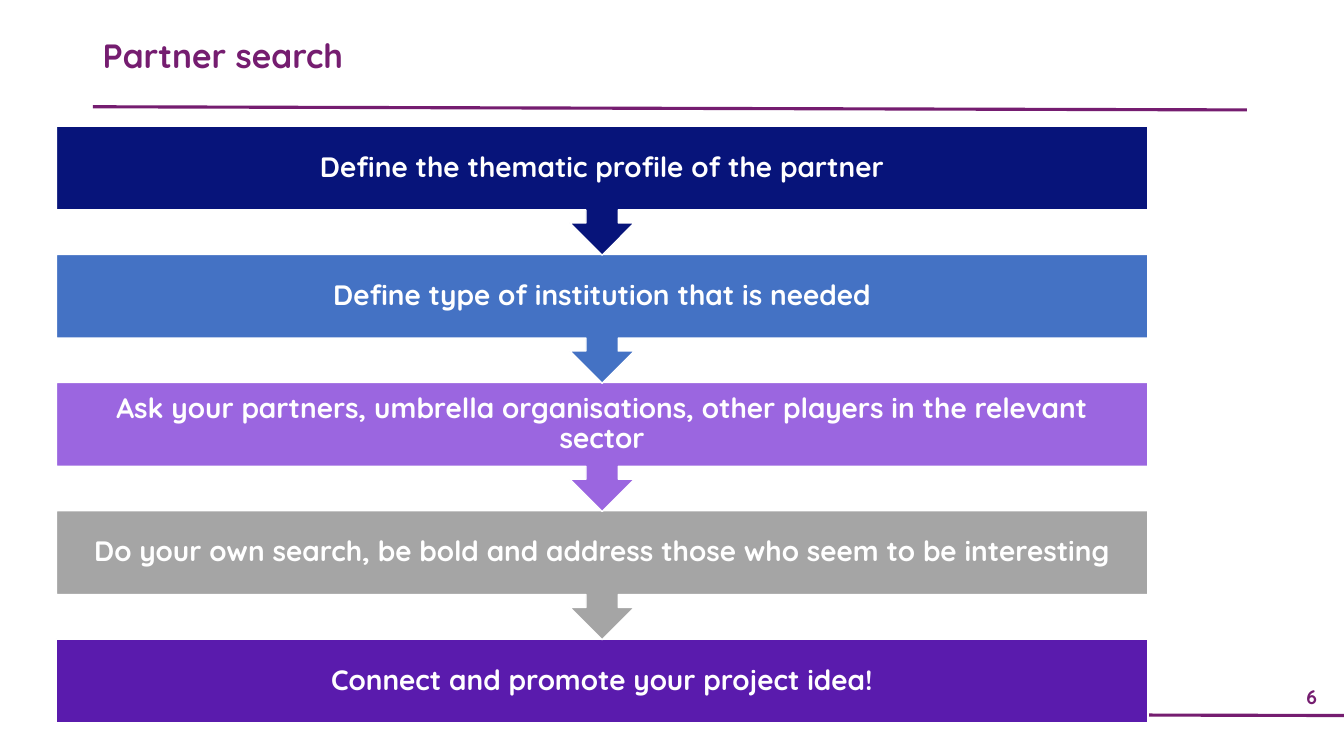
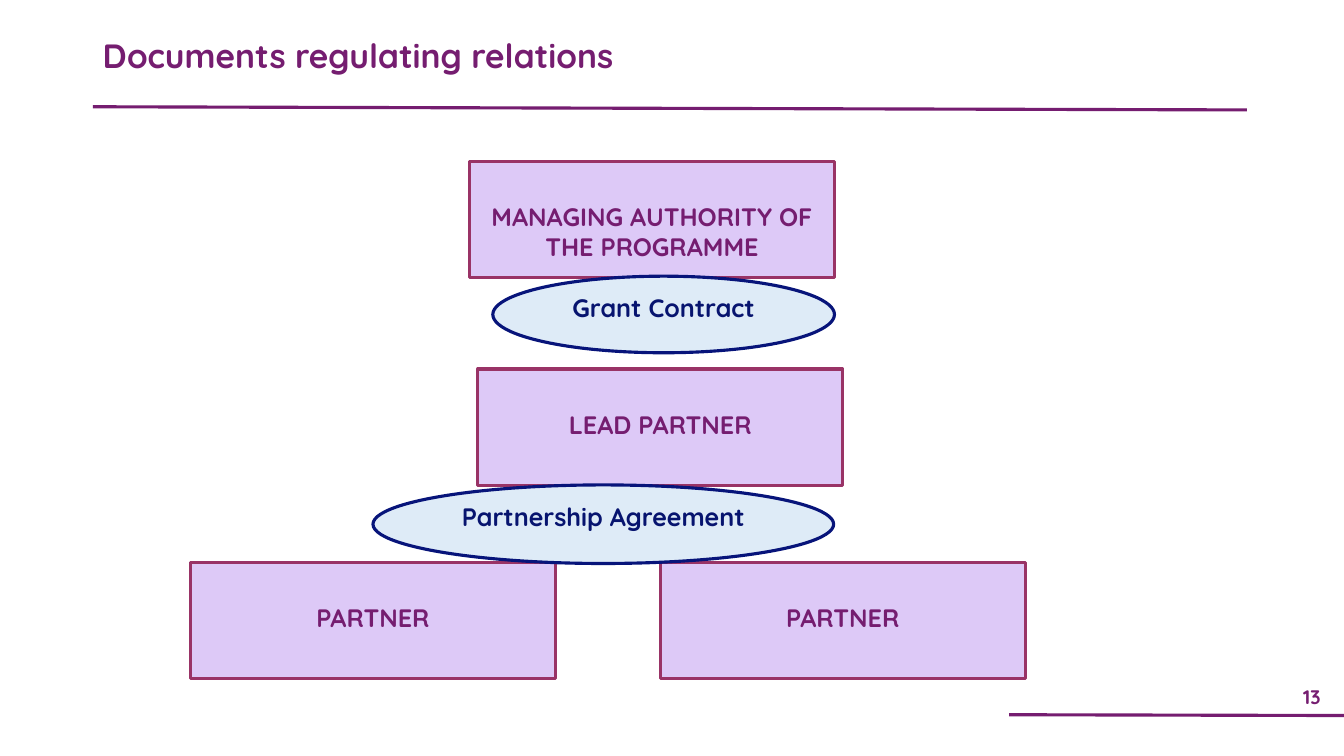
"""Build two slides on finding partners and the documents that bind them."""
from lxml import etree
from pptx import Presentation
from pptx import util as u
from pptx.dml.color import RGBColor
from pptx.enum import shapes, text
from pptx.oxml import ns

FONT = "Quicksand"
COLOURS = {
    "plum": "751D70",
    "navy": "07147A",
    "ink": "07146F",
    "blue": "4472C4",
    "lilac": "9B66E0",
    "grey": "A5A5A5",
    "violet": "5A1BAD",
    "white": "FFFFFF",
    "lavender": "DDC9F7",
    "wine": "993366",
    "ice": "DEEBF7",
}


def colour(name):
    return RGBColor.from_string(COLOURS[name])


class Deck:
    def __init__(self):
        self.prs = Presentation()
        self.prs.slide_width = u.Cm(33.87)
        self.prs.slide_height = u.Cm(19.05)
        self.slide = None

    def new_slide(self, title, number):
        self.slide = self.prs.slides.add_slide(self.prs.slide_layouts[6])
        self.rule(2.34, 2.69, 31.42, 2.77)
        self.rule(25.43, 18.01, 33.87, 18.03)
        self.label(number, (32.26, 17.09, 1.6, 0.91), 14,
                   text.PP_ALIGN.CENTER, text.MSO_ANCHOR.MIDDLE)
        self.label(title, (2.34, 0.86, 24.71, 1.65), 24, spacing=0.9)

    def rule(self, x1, y1, x2, y2):
        line = self.slide.shapes.add_connector(
            shapes.MSO_CONNECTOR.STRAIGHT, u.Cm(x1), u.Cm(y1), u.Cm(x2), u.Cm(y2))
        line.line.color.rgb = colour("plum")
        line.line.width = u.Pt(2.25)
        etree.SubElement(line._element.spPr, ns.qn("a:effectLst"))

    def set_words(self, frame, words, size, ink, align, anchor, spacing=1.0):
        frame.word_wrap = True
        frame.vertical_anchor = anchor
        frame.text = words
        paragraph = frame.paragraphs[0]
        paragraph.alignment = align
        paragraph.line_spacing = spacing
        font = paragraph.runs[0].font
        font.name, font.size, font.bold = FONT, u.Pt(size), True
        font.color.rgb = colour(ink)

    def label(self, words, box, size, align=text.PP_ALIGN.LEFT,
              anchor=text.MSO_ANCHOR.TOP, spacing=1.0):
        holder = self.slide.shapes.add_textbox(*map(u.Cm, box))
        self.set_words(holder.text_frame, words, size, "plum", align, anchor, spacing)

    def block(self, kind, box, fill, outline, width, words, size, ink,
              anchor=text.MSO_ANCHOR.TOP, spacing=1.0):
        block = self.slide.shapes.add_shape(kind, *map(u.Cm, box))
        block.shadow.inherit = False
        block.fill.solid()
        block.fill.fore_color.rgb = colour(fill)
        block.line.color.rgb = colour(outline)
        block.line.width = u.Pt(width)
        self.set_words(block.text_frame, words, size, ink,
                       text.PP_ALIGN.CENTER, anchor, spacing)
        return block.text_frame

    def step(self, words, top, height, fill, kind):
        frame = self.block(kind, (1.42, top, 27.51, height), fill, "white", 1,
                           words, 20, "white", text.MSO_ANCHOR.MIDDLE, 0.9)
        frame.margin_left = frame.margin_right = u.Cm(0.41)
        frame.margin_top = frame.margin_bottom = u.Cm(0.41)

    def party(self, words, left, top):
        frame = self.block(shapes.MSO_SHAPE.RECTANGLE, (left, top, 9.2, 2.93),
                           "lavender", "wine", 2.25, words, 18, "plum")
        frame.margin_top = u.Cm(1.01)

    def agreement(self, words, left, top, width, height):
        self.block(shapes.MSO_SHAPE.OVAL, (left, top, width, height),
                   "ice", "navy", 2.25, words, 18, "ink")


def partner_search(deck):
    deck.new_slide("Partner search", "6")
    steps = [
        ("Define the thematic profile of the partner", "navy"),
        ("Define type of institution that is needed", "blue"),
        ("Ask your partners, umbrella organisations, other players in the "
         "relevant sector", "lilac"),
        ("Do your own search, be bold and address those who seem to be "
         "interesting", "grey"),
        ("Connect and promote your project idea!", "violet"),
    ]
    first_top, pitch = 3.18, 3.23
    last = len(steps) - 1
    for index, (words, fill) in reversed(list(enumerate(steps))):
        if index == last:
            kind, height = shapes.MSO_SHAPE.RECTANGLE, 2.12
        else:
            kind, height = shapes.MSO_SHAPE.DOWN_ARROW_CALLOUT, 3.25
        deck.step(words, first_top + index * pitch, height, fill, kind)


def regulating_documents(deck):
    deck.new_slide("Documents regulating relations", "13")
    deck.party("MANAGING AUTHORITY OF THE PROGRAMME", 11.83, 4.06)
    deck.agreement("Grant Contract", 12.42, 6.96, 8.61, 1.93)
    deck.party("LEAD PARTNER", 12.04, 9.3)
    for left in (4.8, 16.64):
        deck.party("PARTNER", left, 14.17)
    deck.agreement("Partnership Agreement", 9.4, 12.22, 11.61, 1.98)


def main():
    deck = Deck()
    partner_search(deck)
    regulating_documents(deck)
    deck.prs.save("out.pptx")


if __name__ == "__main__":
    main()
